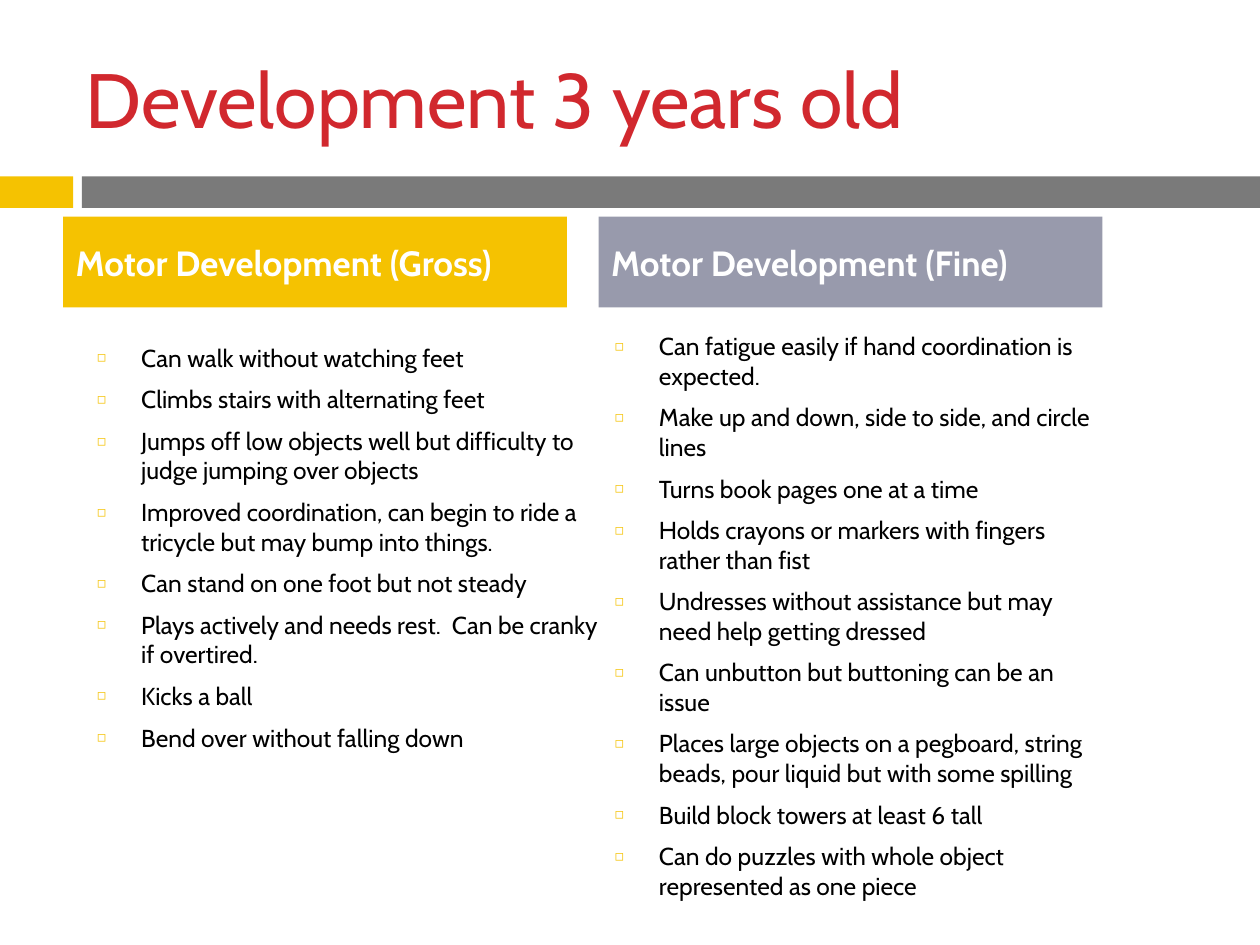
from lxml import etree
from pptx import Presentation
from pptx.dml.color import RGBColor
from pptx.enum.shapes import MSO_SHAPE
from pptx.enum.text import MSO_ANCHOR, MSO_AUTO_SIZE, PP_ALIGN
from pptx.oxml.ns import qn
from pptx.util import Emu, Pt

RECTANGLE = MSO_SHAPE.RECTANGLE
TOP, MIDDLE = MSO_ANCHOR.TOP, MSO_ANCHOR.MIDDLE
LEFT = PP_ALIGN.LEFT
NO_AUTOFIT = MSO_AUTO_SIZE.NONE

PX = 9144  # 100 px to the inch
FONT = "Cabin"
RED = RGBColor(0xD1, 0x28, 0x2E)
YELLOW = RGBColor(0xF5, 0xC2, 0x01)
GRAY = RGBColor(0x7A, 0x7A, 0x7A)
LAVENDER = RGBColor(0x98, 0x9A, 0xAC)
BLACK = RGBColor(0, 0, 0)
WHITE = RGBColor(0xFF, 0xFF, 0xFF)

GROSS_SKILLS = [
    "Can walk without watching feet",
    "Climbs stairs with alternating feet",
    "Jumps off low objects well but difficulty to judge jumping over objects",
    "Improved coordination, can begin to ride a tricycle but may bump into things.",
    "Can stand on one foot but not steady",
    "Plays actively and needs rest.  Can be cranky if overtired.",
    "Kicks a ball",
    "Bend over without falling down",
]
FINE_SKILLS = [
    "Can fatigue easily if hand coordination is expected.",
    "Make up and down, side to side, and circle lines",
    "Turns book pages one at a time",
    "Holds crayons or markers with fingers rather than fist",
    "Undresses without assistance but may need help getting dressed",
    "Can unbutton but buttoning can be an issue",
    "Places large objects on a pegboard, string beads, pour liquid but with some spilling",
    "Build block towers at least 6 tall",
    "Can do puzzles with whole object represented as one piece",
]


def fill_placeholder(holder, box, lines, size, color, anchor, bold=False, space=0):
    holder.left, holder.top, holder.width, holder.height = (Emu(n * PX) for n in box)
    frame = holder.text_frame
    frame.text = "\n".join(lines)
    frame.word_wrap = True
    frame.auto_size = NO_AUTOFIT
    frame.vertical_anchor = anchor
    for paragraph in frame.paragraphs:
        paragraph.alignment = LEFT
        paragraph.space_before = Pt(space)
        font = paragraph.runs[0].font
        font.name, font.size, font.bold = FONT, Pt(size), bold
        font.color.rgb = color


def add_bullet(paragraph):
    props = paragraph._p.get_or_add_pPr()
    props.set("marL", str(35 * PX))
    props.set("indent", str(-35 * PX))
    bullet_color = etree.SubElement(props, qn("a:buClr"))
    etree.SubElement(bullet_color, qn("a:srgbClr"), val=str(YELLOW))
    etree.SubElement(props, qn("a:buSzPct"), val="60000")
    etree.SubElement(props, qn("a:buFont"), typeface=FONT)
    etree.SubElement(props, qn("a:buChar"), char="◻")


prs = Presentation()
prs.slide_width, prs.slide_height = Emu(1000 * PX), Emu(750 * PX)
slide = prs.slides.add_slide(prs.slide_layouts.get_by_name("Comparison"))
title, gross_header, gross_list, fine_header, fine_list = slide.placeholders

# Band under the title
for left, width, color in [(0, 58, YELLOW), (65, 935, GRAY)]:
    band = slide.shapes.add_shape(
        RECTANGLE, Emu(left * PX), Emu(140 * PX), Emu(width * PX), Emu(25 * PX))
    band.shadow.inherit = False
    band.fill.solid()
    band.fill.fore_color.rgb = color
    band.line.fill.background()

# Title
fill_placeholder(title, (58, 30, 892, 95), ["Development 3 years old"], 44, RED, MIDDLE)

# Column headers
for header, left, text, color in [
    (gross_header, 50, "Motor Development (Gross)", YELLOW),
    (fine_header, 475, "Motor Development (Fine)", LAVENDER),
]:
    fill_placeholder(header, (left, 172, 400, 72), [text], 20, WHITE, MIDDLE,
                     bold=True, space=7)
    header.fill.solid()
    header.fill.fore_color.rgb = color

# Skill lists
for skill_list, box, skills in [
    (gross_list, (67, 267, 425, 392), GROSS_SKILLS),
    (fine_list, (478, 258, 405, 492), FINE_SKILLS),
]:
    fill_placeholder(skill_list, box, skills, 14, BLACK, TOP, space=7)
    for skill in skill_list.text_frame.paragraphs:
        add_bullet(skill)

prs.save("out.pptx")
